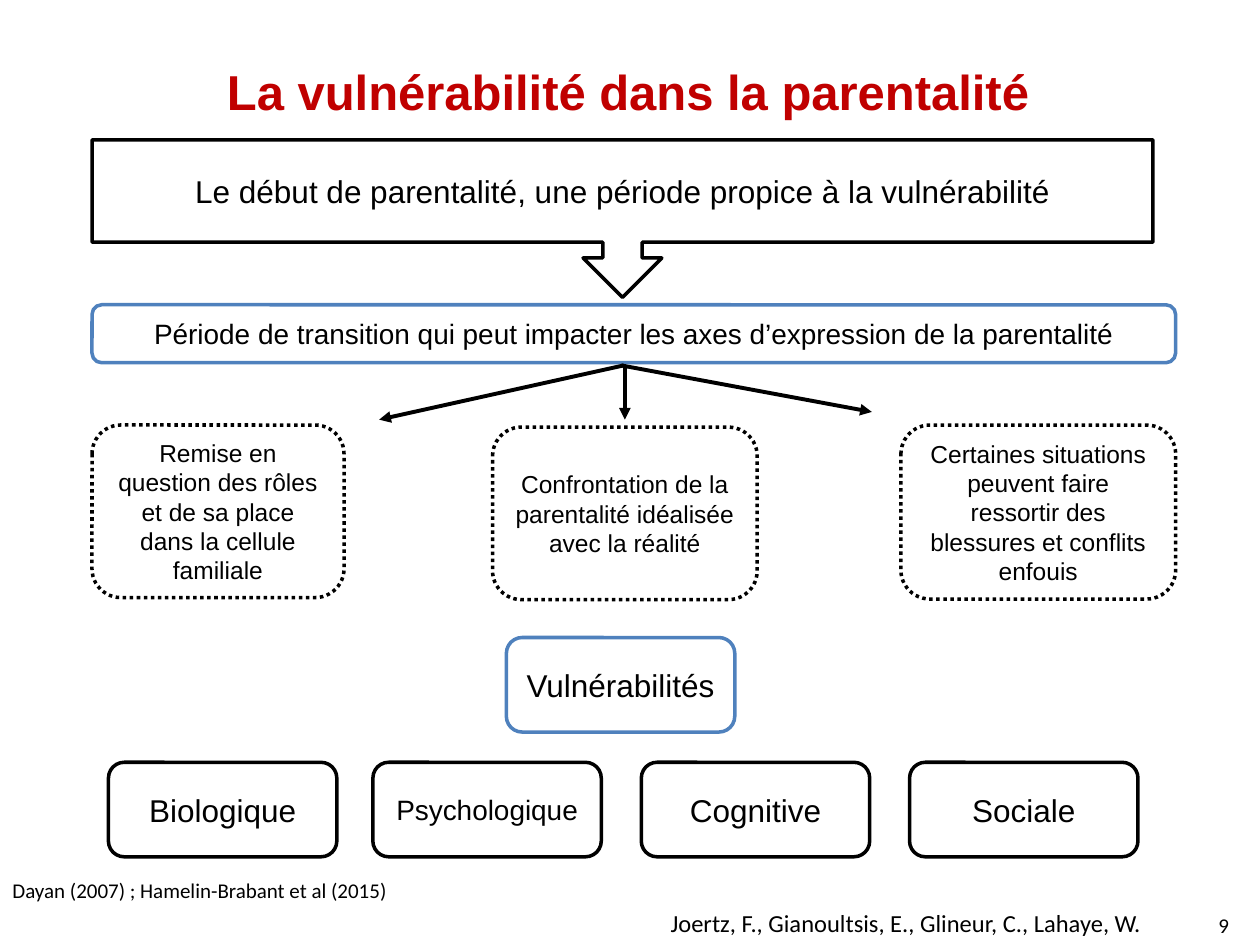
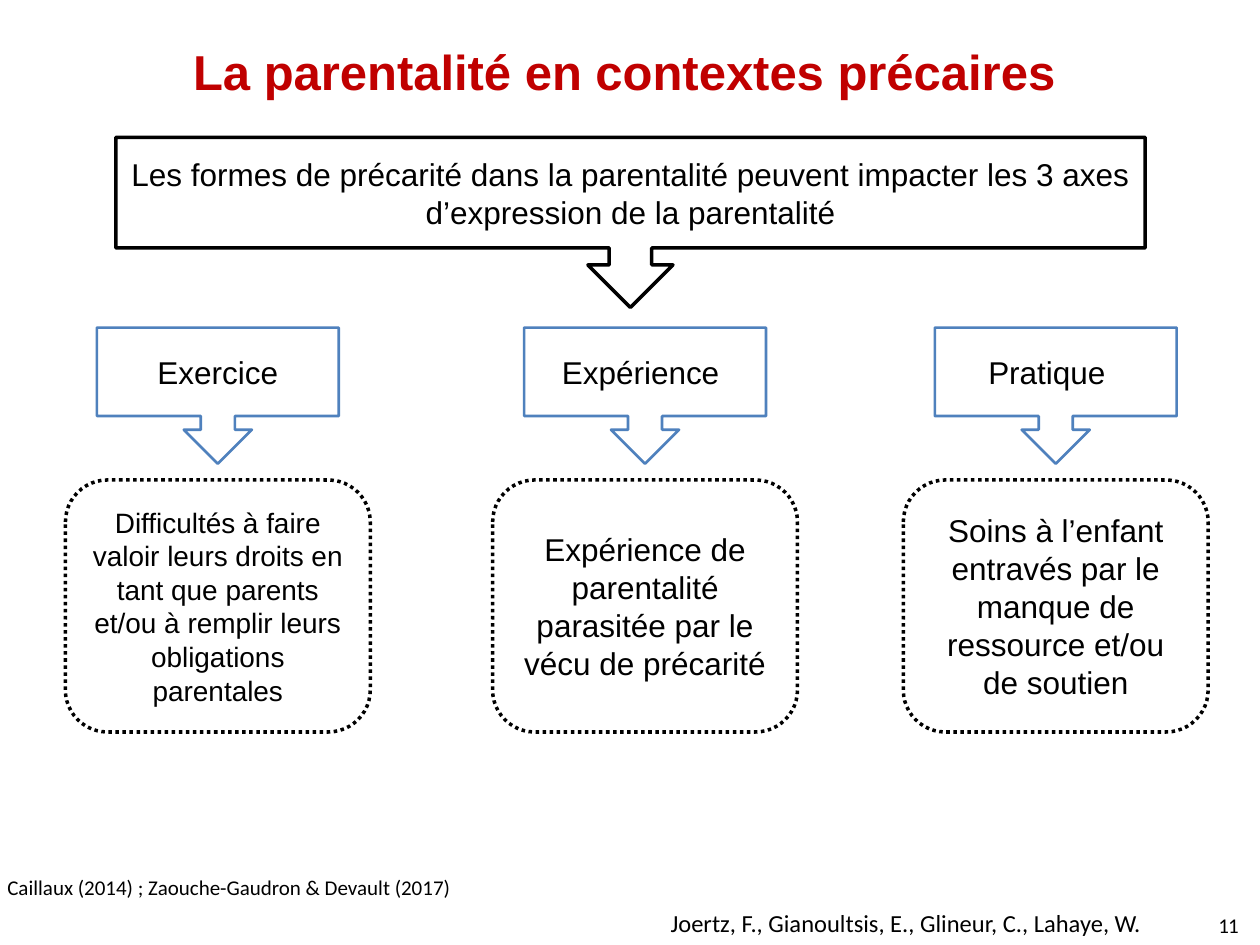
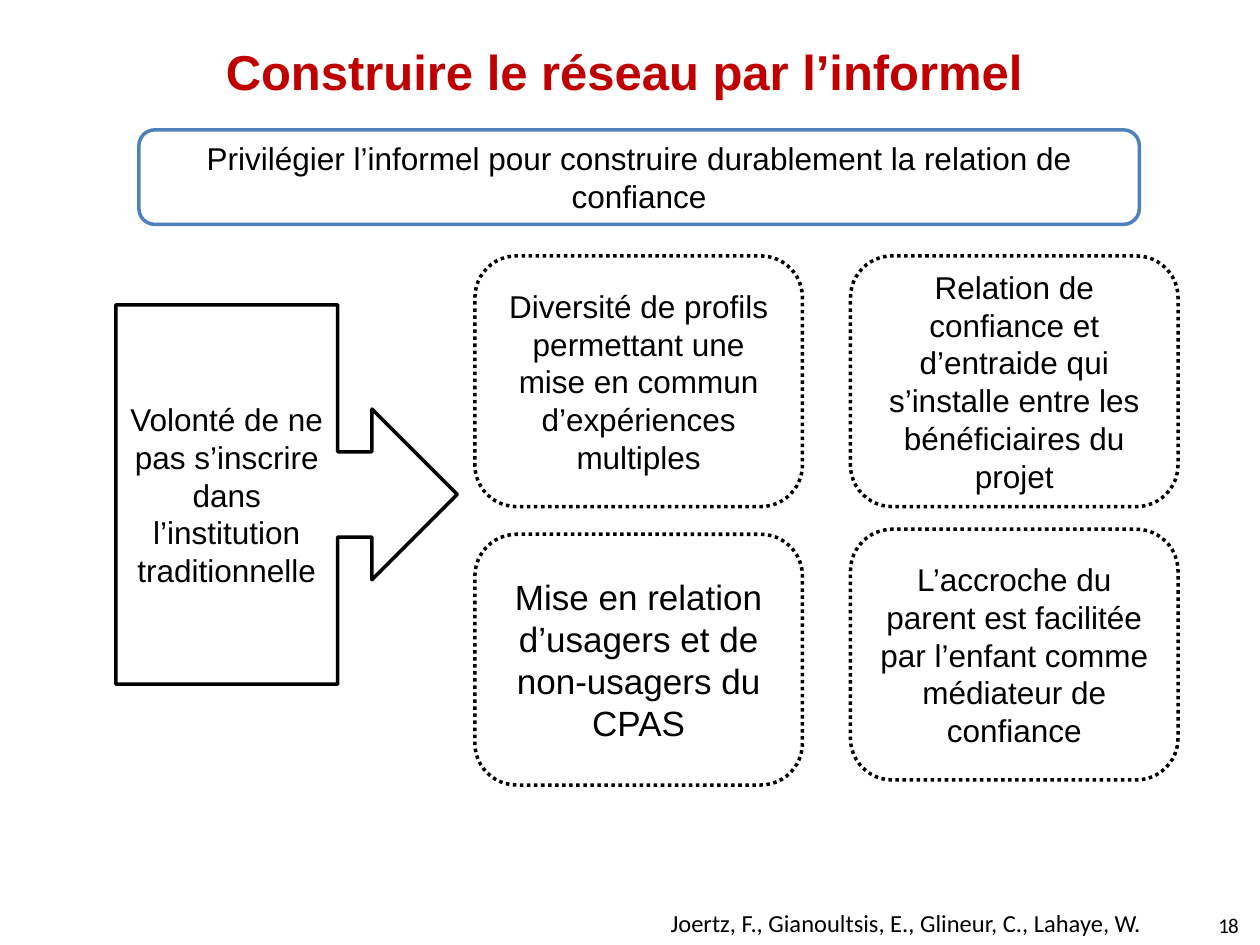
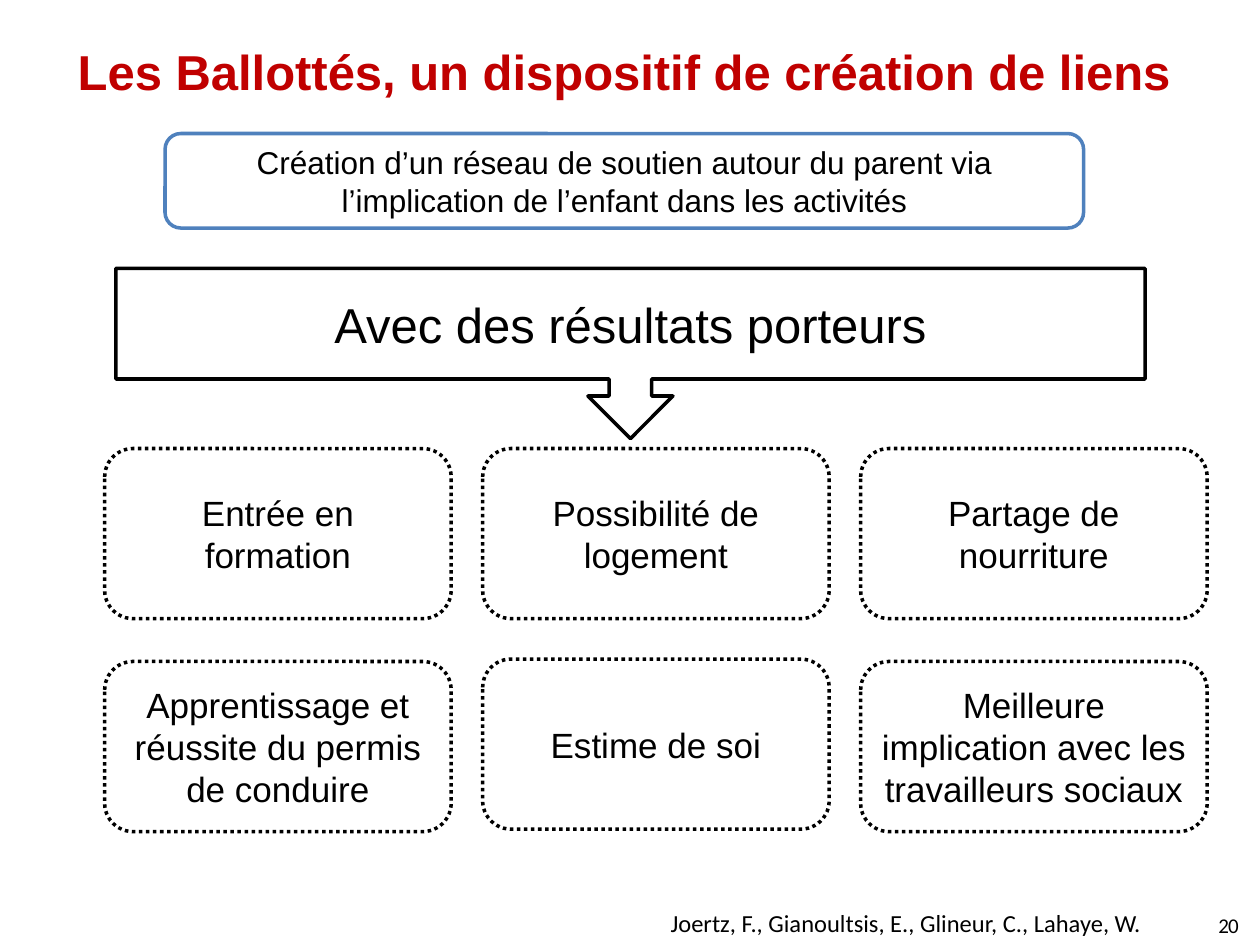
from lxml.etree import SubElement
from pptx import Presentation
from pptx.dml.color import RGBColor
from pptx.enum.dml import MSO_LINE
from pptx.enum.shapes import MSO_CONNECTOR, MSO_SHAPE
from pptx.enum.text import MSO_ANCHOR, PP_ALIGN
from pptx.oxml.ns import qn
from pptx.util import Pt

BLACK = RGBColor(0x00, 0x00, 0x00)
WHITE = RGBColor(0xFF, 0xFF, 0xFF)
BLUE = RGBColor(0x4F, 0x81, 0xBD)
RED = RGBColor(0xC0, 0x00, 0x00)

BODY_FONT = "Arial"
FOOTER_FONT = "Calibri"
AUTHORS = "Joertz, F., Gianoultsis, E., Glineur, C., Lahaye, W."


def write(shape, text, size, font=BODY_FONT, color=BLACK, bold=False, align=PP_ALIGN.CENTER):
    shape.text_frame.word_wrap = True
    shape.text_frame.text = text
    paragraph = shape.text_frame.paragraphs[0]
    paragraph.alignment = align
    run = paragraph.runs[0]
    run.font.size = Pt(size)
    run.font.name = font
    run.font.color.rgb = color
    run.font.bold = bold
    return paragraph


def add_text(slide, box, text, size, **style):
    textbox = slide.shapes.add_textbox(*map(Pt, box))
    return textbox, write(textbox, text, size, **style)


def set_insets(text_frame, inset):
    text_frame.margin_left = text_frame.margin_right = Pt(inset)
    text_frame.margin_top = text_frame.margin_bottom = Pt(inset)


def add_title(slide, text, left=12.2, top=19.4):
    textbox, _ = add_text(slide, (left, top, 689, 41.8), text, 28, color=RED, bold=True)
    set_insets(textbox.text_frame, 4.3)
    textbox.text_frame.vertical_anchor = MSO_ANCHOR.MIDDLE


def add_footer(slide, number):
    textbox, paragraph = add_text(slide, (690.5, 523.4, 19.4, 13.7), str(number), 12,
                                  font=FOOTER_FONT, align=PP_ALIGN.LEFT)
    set_insets(textbox.text_frame, 0)
    paragraph.line_spacing = Pt(12.4)
    paragraph_properties = paragraph._p.get_or_add_pPr()
    paragraph_properties.set("marL", str(Pt(5.8)))
    paragraph.runs[0].font._element.set("spc", "-50")
    add_text(slide, (325.4, 515.5, 384.5, 24.5), AUTHORS, 14, font=FOOTER_FONT)


def add_citation(slide, left, top, text):
    add_text(slide, (left, top, 444, 21.6), text, 12, font=FOOTER_FONT, align=PP_ALIGN.LEFT)


def add_box(slide, box, text, size=18, kind=MSO_SHAPE.ROUNDED_RECTANGLE,
            line_color=BLACK, line_width=2, dotted=False):
    shape = slide.shapes.add_shape(kind, *map(Pt, box))
    shape.shadow.inherit = False
    shape.fill.solid()
    shape.fill.fore_color.rgb = WHITE
    shape.line.color.rgb = line_color
    shape.line.width = Pt(line_width)
    if dotted:
        shape.line.dash_style = MSO_LINE.ROUND_DOT
    shape.text_frame.vertical_anchor = MSO_ANCHOR.MIDDLE
    write(shape, text, size)
    return shape


def add_callout(slide, box, text, size=18, kind=MSO_SHAPE.DOWN_ARROW_CALLOUT, **line):
    return add_box(slide, box, text, size, kind, **line)


def add_arrow(slide, start, end):
    connector = slide.shapes.add_connector(MSO_CONNECTOR.STRAIGHT, *map(Pt, start + end))
    connector.line.color.rgb = BLACK
    connector.line.width = Pt(2.25)
    SubElement(connector.line._get_or_add_ln(), qn("a:tailEnd"), type="triangle")
    SubElement(connector._element.spPr, qn("a:effectLst"))


def build_vulnerability(slide):
    add_citation(slide, 0, 498.2, "Dayan (2007) ; Hamelin-Brabant et al (2015)")
    add_callout(slide, (52.6, 79.9, 606.2, 90),
                "Le début de parentalité, une période propice à la vulnérabilité")
    add_box(slide, (52.6, 174.2, 619.2, 33.1),
            "Période de transition qui peut impacter les axes d’expression de la parentalité",
            16, line_color=BLUE)

    impacts = [
        ((52.6, 242.9, 144, 98.6),
         "Remise en question des rôles et de sa place dans la cellule familiale"),
        ((281.5, 244.1, 151.2, 98.6),
         "Confrontation de la parentalité idéalisée avec la réalité"),
        ((514.8, 242.9, 157, 99.4),
         "Certaines situations peuvent faire ressortir des blessures et conflits enfouis"),
    ]
    for box, text in impacts:
        add_box(slide, box, text, 14, dotted=True)

    add_title(slide, "La vulnérabilité dans la parentalité", 14.4, 31)
    for start, end in [((356.4, 208.8), (216.7, 239.8)),
                       ((357.1, 208.8), (357.1, 239.8)),
                       ((355, 208.8), (498.2, 235.4))]:
        add_arrow(slide, start, end)

    domains = [("Biologique", 62, 18), ("Psychologique", 213.1, 16),
               ("Cognitive", 366.5, 18), ("Sociale", 519.8, 18)]
    for text, left, size in domains:
        add_box(slide, (left, 435.6, 130.5, 54), text, size)
    add_box(slide, (289.4, 364.3, 130.5, 54), "Vulnérabilités", line_color=BLUE)


def build_precarity(slide):
    add_title(slide, "La parentalité en contextes précaires")
    add_callout(slide, (66.2, 78.5, 588.2, 97.2),
                "Les formes de précarité dans la parentalité peuvent impacter "
                "les 3 axes d’expression de la parentalité")

    # Axis, left edge, right inset, effect, effect text size
    columns = [
        ("Exercice", 37.4, 7.2,
         "Difficultés à faire valoir leurs droits en tant que parents "
         "et/ou à remplir leurs obligations parentales", 16),
        ("Expérience", 281.5, 12.2,
         "Expérience de parentalité parasitée par le vécu de précarité", 18),
        ("Pratique", 516.2, 17.2,
         "Soins à l’enfant entravés par le manque de ressource et/ou de soutien", 18),
    ]
    for axis, left, right_inset, effect, size in columns:
        callout = add_callout(slide, (left + 18, 187.2, 138.2, 77.8), axis,
                              line_color=BLUE, line_width=1.5)
        callout.text_frame.margin_right = Pt(right_inset)
        add_box(slide, (left, 274.3, 174.2, 144), effect, size, dotted=True)

    add_citation(slide, -2.9, 496.1, "Caillaux (2014) ; Zaouche-Gaudron & Devault (2017)")


def build_informal_network(slide):
    add_title(slide, "Construire le réseau par l’informel")
    add_box(slide, (79.4, 74.2, 571.7, 54),
            "Privilégier l’informel pour construire durablement la relation de confiance",
            line_color=BLUE)
    add_callout(slide, (66.2, 174.2, 195.1, 216.7),
                "Volonté de ne pas s’inscrire dans l’institution traditionnelle",
                kind=MSO_SHAPE.RIGHT_ARROW_CALLOUT)

    left, right = 271.4, 486
    benefits = [
        (left, 146.2, "Diversité de profils permettant une mise en commun "
                      "d’expériences multiples", 18),
        (right, 146.2, "Relation de confiance et d’entraide qui s’installe "
                       "entre les bénéficiaires du projet", 18),
        (left, 305.3, "Mise en relation d’usagers et de non-usagers du CPAS", 20),
        (right, 302.4, "L’accroche du parent est facilitée par l’enfant "
                       "comme médiateur de confiance", 18),
    ]
    for x, y, text, size in benefits:
        add_box(slide, (x, y, 187.2, 143.3), text, size, dotted=True)


def build_results(slide):
    add_title(slide, "Les Ballottés, un dispositif de création de liens")
    add_box(slide, (94.3, 76.3, 524.9, 54),
            "Création d’un réseau de soutien autour du parent via "
            "l’implication de l’enfant dans les activités", line_color=BLUE)
    add_callout(slide, (66.2, 153.4, 588.2, 97.2), "Avec des résultats porteurs", 28)

    results = [
        [("Entrée en formation", 256.3), ("Possibilité de logement", 256.3),
         ("Partage de nourriture", 256.3)],
        [("Apprentissage et réussite du permis de conduire", 378),
         ("Estime de soi", 376.6),
         ("Meilleure implication avec les travailleurs sociaux", 378)],
    ]
    for row in results:
        for column, (text, top) in enumerate(row):
            add_box(slide, (59.8 + 216 * column, top, 198, 97.2), text, 20, dotted=True)


def main():
    presentation = Presentation()
    presentation.slide_width = Pt(720)
    presentation.slide_height = Pt(540)
    blank_layout = presentation.slide_layouts[6]
    pages = [(build_vulnerability, 9), (build_precarity, 11),
             (build_informal_network, 18), (build_results, 20)]
    for build, number in pages:
        slide = presentation.slides.add_slide(blank_layout)
        build(slide)
        add_footer(slide, number)
    presentation.save("out.pptx")


if __name__ == "__main__":
    main()
